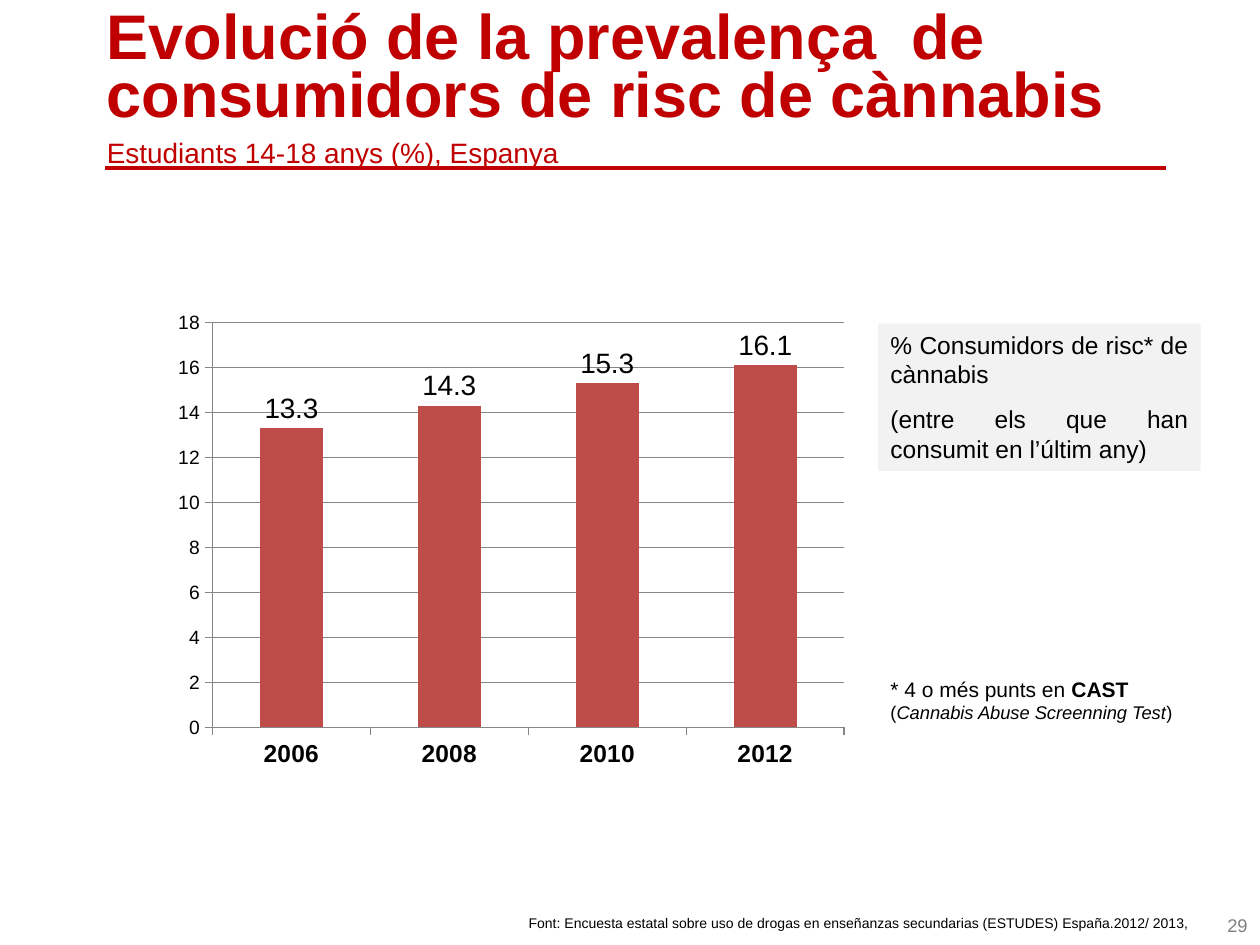
from lxml import etree
from pptx import Presentation
from pptx.chart.data import CategoryChartData
from pptx.dml.color import RGBColor
from pptx.enum import chart as ch, shapes, text
from pptx.oxml import parse_xml
from pptx.oxml.ns import nsdecls, qn
from pptx.util import Pt

RED = RGBColor(0xC0, 0x00, 0x00)
BAR = RGBColor(0xBE, 0x4D, 0x4A)
PANEL = RGBColor(0xF2, 0xF2, 0xF2)
AXIS = RGBColor(0x86, 0x86, 0x86)
GRAY = RGBColor(0x80, 0x80, 0x80)
BLACK = RGBColor(0, 0, 0)
WHITE = RGBColor(0xFF, 0xFF, 0xFF)
FONT = "Arial"


def add_text(s, box, paras, size=14, color=BLACK, align=text.PP_ALIGN.LEFT,
             anchor=text.MSO_ANCHOR.TOP, fill=None, before=0, after=0, spacing=None):
    """Each paragraph is a list of (text, font overrides) runs."""
    sp = s.shapes.add_shape(shapes.MSO_SHAPE.RECTANGLE, *map(Pt, box)) if fill \
        else s.shapes.add_textbox(*map(Pt, box))
    if fill:
        sp.shadow.inherit = False
        sp.fill.solid()
        sp.fill.fore_color.rgb = fill
        sp.line.fill.background()
    tf = sp.text_frame
    tf.word_wrap = True
    tf.vertical_anchor = anchor
    for i, runs in enumerate(paras):
        p = tf.paragraphs[0] if i == 0 else tf.add_paragraph()
        p.alignment = align
        p.space_before = Pt(before if i else 0)
        p.space_after = Pt(after)
        if spacing:
            p.line_spacing = Pt(spacing[i])
        for words, fmt in runs:
            r = p.add_run()
            r.text = words
            r.font.name = FONT
            r.font.size = Pt(fmt.get("size", size))
            r.font.bold = fmt.get("bold", False)
            r.font.italic = fmt.get("italic", False)
            r.font.color.rgb = color


prs = Presentation()
prs.slide_width, prs.slide_height = Pt(720), Pt(540)
s = prs.slides.add_slide(prs.slide_layouts[6])
s.background.fill.solid()
s.background.fill.fore_color.rgb = WHITE

# Rule under the title
rule = s.shapes.add_connector(shapes.MSO_CONNECTOR.STRAIGHT, Pt(60), Pt(96), Pt(666), Pt(96))
rule.line.color.rgb = RED
rule.line.width = Pt(2.25)
etree.SubElement(rule.element.spPr, qn("a:effectLst"))

# Column chart
data = CategoryChartData(number_format="0.0")
data.categories = ["2006", "2008", "2010", "2012"]
data.add_series("% Consumidors de risc", (13.3, 14.3, 15.3, 16.1))
chart = s.shapes.add_chart(ch.XL_CHART_TYPE.COLUMN_CLUSTERED, Pt(93.6), Pt(173.5),
                           Pt(396.7), Pt(272.2), data).chart
chart.has_legend = False
chart.has_title = False
chart.font.name = FONT
chart.font.size = Pt(18)
chart.font.color.rgb = BLACK

plot = chart.plots[0]
plot.gap_width = 150
plot.vary_by_categories = False
fill = plot.series[0].format.fill
fill.solid()
fill.fore_color.rgb = BAR
plot.has_data_labels = True
labels = plot.data_labels
labels.show_value = True
labels.position = ch.XL_LABEL_POSITION.OUTSIDE_END
labels.number_format = "0.0"
labels.number_format_is_linked = False
labels.font.name = FONT
labels.font.size = Pt(16)
labels.font.color.rgb = BLACK

# Axes
val, cat = chart.value_axis, chart.category_axis
val.minimum_scale, val.maximum_scale, val.major_unit = 0, 18, 2
val.has_major_gridlines = True
val.tick_labels.number_format = "0"
val.tick_labels.number_format_is_linked = False
for axis, size, bold in ((val, 11, False), (cat, 14, True)):
    axis.major_tick_mark = ch.XL_TICK_MARK.OUTSIDE
    axis.minor_tick_mark = ch.XL_TICK_MARK.NONE
    axis.tick_labels.font.name = FONT
    axis.tick_labels.font.size = Pt(size)
    axis.tick_labels.font.bold = bold
    axis.tick_labels.font.color.rgb = BLACK
for part in (val, cat, val.major_gridlines):
    part.format.line.color.rgb = AXIS
    part.format.line.width = Pt(0.75)

# Fixed inner plot area
area = chart.element.chart.plotArea
for old in area.findall(qn("c:layout")):
    area.remove(old)
sizes = "".join(f'<c:{tag} val="{v}"/>' for tag, v in
                (("x", 0.07), ("y", 0.04), ("w", 0.91), ("h", 0.85)))
area.insert(0, parse_xml(
    f'<c:layout {nsdecls("c")}><c:manualLayout><c:layoutTarget val="inner"/>'
    f'<c:xMode val="edge"/><c:yMode val="edge"/>{sizes}</c:manualLayout></c:layout>'))

# Source and page number
add_text(s, (36.7, 519, 652.3, 17.5),
         [[("Font: Encuesta estatal sobre uso de drogas en enseñanzas secundarias "
            "(ESTUDES) España.2012/ 2013, ", {})]],
         size=8, align=text.PP_ALIGN.RIGHT)
add_text(s, (689, 519, 31, 22), [[("29", {})]], size=10.5, color=GRAY,
         align=text.PP_ALIGN.RIGHT)

# Title and subtitle
add_text(s, (54, 21, 666, 79),
         [[("Evolució de la prevalença  de consumidors de risc de cànnabis",
            {"size": 36, "bold": True})],
          [("Estudiants 14-18 anys (%), Espanya", {"size": 16})]],
         color=RED, anchor=text.MSO_ANCHOR.BOTTOM, spacing=(33, 22))

# Explanation panel
add_text(s, (501.8, 185, 184.3, 84.2),
         [[("% Consumidors de risc* de cànnabis", {})],
          [("(entre els que han consumit en l’últim any)", {})]],
         align=text.PP_ALIGN.JUSTIFY, fill=PANEL, before=2.8, after=6)

# Footnote
add_text(s, (501.8, 383, 184.3, 34.6),
         [[("* 4 o més punts en ", {}), ("CAST ", {"bold": True}), ("(", {"size": 10.5}),
           ("Cannabis Abuse Screenning Test", {"size": 10.5, "italic": True}),
           (")", {"size": 10.5})]],
         size=12)

prs.save("out.pptx")
